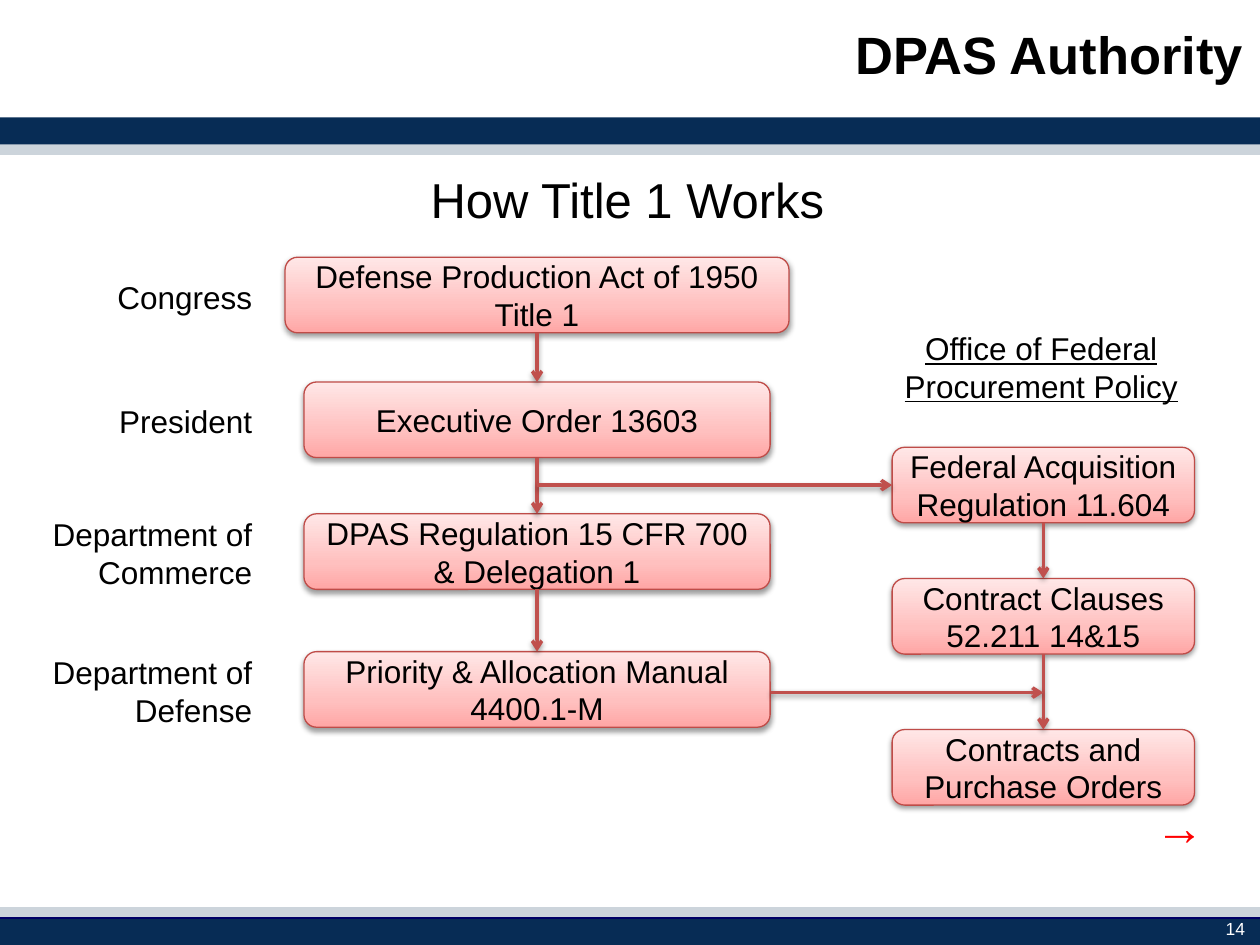
from lxml import etree
from pptx import Presentation
from pptx.dml.color import RGBColor
from pptx.enum.shapes import MSO_CONNECTOR, MSO_SHAPE
from pptx.enum.text import MSO_ANCHOR, MSO_AUTO_SIZE, PP_ALIGN
from pptx.oxml import parse_xml
from pptx.oxml.ns import qn
from pptx.util import Pt

LEFT, CENTER, RIGHT = PP_ALIGN.LEFT, PP_ALIGN.CENTER, PP_ALIGN.RIGHT
TOP, MIDDLE = MSO_ANCHOR.TOP, MSO_ANCHOR.MIDDLE
FIT_SHAPE, NO_FIT = MSO_AUTO_SIZE.SHAPE_TO_FIT_TEXT, MSO_AUTO_SIZE.NONE
RECTANGLE, ROUNDED = MSO_SHAPE.RECTANGLE, MSO_SHAPE.ROUNDED_RECTANGLE
STRAIGHT = MSO_CONNECTOR.STRAIGHT
SITE_TOP, SITE_LEFT, SITE_BOTTOM = 0, 1, 2

NAVY, GREY, BLACK, WHITE = "072C55", "CCD4DB", "000000", "FFFFFF"
NAMESPACE = 'xmlns:a="http://schemas.openxmlformats.org/drawingml/2006/main"'
GRADIENT = f"""<a:gradFill {NAMESPACE} rotWithShape="1"><a:gsLst>
<a:gs pos="0"><a:srgbClr val="FFA6A5"/></a:gs>
<a:gs pos="35000"><a:srgbClr val="FFC0BF"/></a:gs>
<a:gs pos="100000"><a:srgbClr val="FFE7E7"/></a:gs>
</a:gsLst><a:lin ang="16200000" scaled="1"/></a:gradFill>"""
SHADOW = f"""<a:effectLst {NAMESPACE}>
<a:outerShdw blurRad="40000" dist="20000" dir="5400000" rotWithShape="0">
<a:srgbClr val="000000"><a:alpha val="38000"/></a:srgbClr>
</a:outerShdw></a:effectLst>"""


def color(value):
    return RGBColor.from_string(value)


def points(*lengths):
    return [Pt(length) for length in lengths]


class SlideBuilder:
    font = "Arial"
    box_line = "BF4C48"
    arrow_color = "C0504D"

    def __init__(self, slide):
        self.slide = slide
        self.shapes = slide.shapes

    def fill_text(self, shape, text, align, anchor=MIDDLE, wrap=True, fit=NO_FIT,
                  text_color=BLACK, **font_format):
        frame = shape.text_frame
        frame.word_wrap = wrap
        frame.auto_size = fit
        frame.vertical_anchor = anchor
        paragraph = frame.paragraphs[0]
        paragraph.text = text
        paragraph.alignment = align
        values = {"name": self.font, "size": Pt(18), **font_format}
        for name, value in values.items():
            setattr(paragraph.font, name, value)
        paragraph.font.color.rgb = color(text_color)
        return paragraph

    def title(self, text, left, top, width, height):
        title = self.shapes.title
        title.left, title.top, title.width, title.height = points(left, top, width, height)
        paragraph = self.fill_text(title, text, RIGHT, size=Pt(30), bold=True)
        paragraph.line_spacing = 0.9

    def band(self, top, height, fill, line=None):
        """Draw a full-width stripe."""
        band = self.shapes.add_shape(RECTANGLE, *points(-0.5, top, 721, height))
        band.shadow.inherit = False
        band.fill.solid()
        band.fill.fore_color.rgb = color(fill)
        if line:
            band.line.color.rgb = color(line)
            band.line.width = Pt(0.75)
        else:
            band.line.fill.background()

    def text(self, text, left, top, width, height, align, **text_format):
        box = self.shapes.add_textbox(*points(left, top, width, height))
        self.fill_text(box, text, align, **text_format)

    def box(self, text, center, top, width, height=43.2):
        box = self.shapes.add_shape(
            ROUNDED, *points(center - width / 2, top, width, height))
        box.line.color.rgb = color(self.box_line)
        box.line.width = Pt(0.75)
        properties = box._element.spPr
        properties.find(qn("a:prstGeom")).addnext(parse_xml(GRADIENT))
        properties.append(parse_xml(SHADOW))
        self.fill_text(box, text, CENTER)
        return box

    def arrow(self, start=(0, 0), end=(0, 0), source=None, target=None):
        """Join two points; source and target are (shape, site) pairs."""
        arrow = self.shapes.add_connector(STRAIGHT, *points(*start, *end))
        if source:
            arrow.begin_connect(*source)
        if target:
            arrow.end_connect(*target)
        arrow.line.color.rgb = color(self.arrow_color)
        arrow.line.width = Pt(2)
        line = arrow._element.spPr.find(qn("a:ln"))
        etree.SubElement(line, qn("a:tailEnd"), type="arrow")
        arrow._element.spPr.append(parse_xml(SHADOW))

    def flow(self, boxes):
        """Link each box to the one below it."""
        for upper, lower in zip(boxes, boxes[1:]):
            self.arrow(source=(upper, SITE_BOTTOM), target=(lower, SITE_TOP))


def main():
    presentation = Presentation()
    presentation.slide_width, presentation.slide_height = points(720, 540)
    title_only = presentation.slide_layouts[5]
    builder = SlideBuilder(presentation.slides.add_slide(title_only))

    builder.band(81.4, 7.2, GREY)
    builder.band(67, 15.5, NAVY)
    builder.band(518.4, 6, GREY)
    builder.band(524.6, 15.8, NAVY, line="000066")
    builder.title("DPAS Authority", 159, 2.9, 558.7, 60.5)
    builder.text("14", 682.6, 521.3, 36, 17.3, RIGHT, anchor=TOP,
                 text_color=WHITE, size=Pt(10))
    builder.text("How Title 1 Works", 239, 93.6, 242, 41, LEFT, anchor=TOP,
                 wrap=False, fit=FIT_SHAPE, size=Pt(28))

    main_center, side_center = 306.9, 596.2
    authorities = [
        ("Congress", "Defense Production Act of 1950 Title 1", 147, 288),
        ("President", "Executive Order 13603", 218.3, 266.4),
        ("Department of Commerce", "DPAS Regulation 15 CFR 700 & Delegation 1", 293.6, 266.4),
        ("Department of Defense", "Priority & Allocation Manual 4400.1-M", 372.4, 266.4),
    ]
    main_boxes = []
    for office, document, top, width in authorities:
        height = 51 if " " in office else 29
        builder.text(office, 21, top + 22.4 - height / 2, 130.2, height, RIGHT,
                     fit=FIT_SHAPE)
        main_boxes.append(builder.box(document, main_center, top, width))

    builder.text("Office of Federal\nProcurement Policy", 509, 184.3, 172, 51, CENTER,
                 anchor=TOP, wrap=False, fit=FIT_SHAPE, underline=True)
    procurement = [
        ("Federal Acquisition Regulation 11.604", 255.6),
        ("Contract Clauses 52.211 14&15", 330.6),
        ("Contracts and Purchase Orders", 416.9),
    ]
    side_boxes = [builder.box(text, side_center, top, 172.8) for text, top in procurement]

    builder.flow(main_boxes)
    builder.flow(side_boxes)
    builder.arrow(start=(main_center, 277.2), target=(side_boxes[0], SITE_LEFT))
    builder.arrow(start=(440.4, 395.8), end=(side_center, 395.8))
    builder.text("→", 653, 451.4, 42.5, 41, LEFT, anchor=TOP, wrap=False,
                 fit=FIT_SHAPE, text_color="FF0000", size=Pt(28), bold=True)

    presentation.save("out.pptx")


if __name__ == "__main__":
    main()
